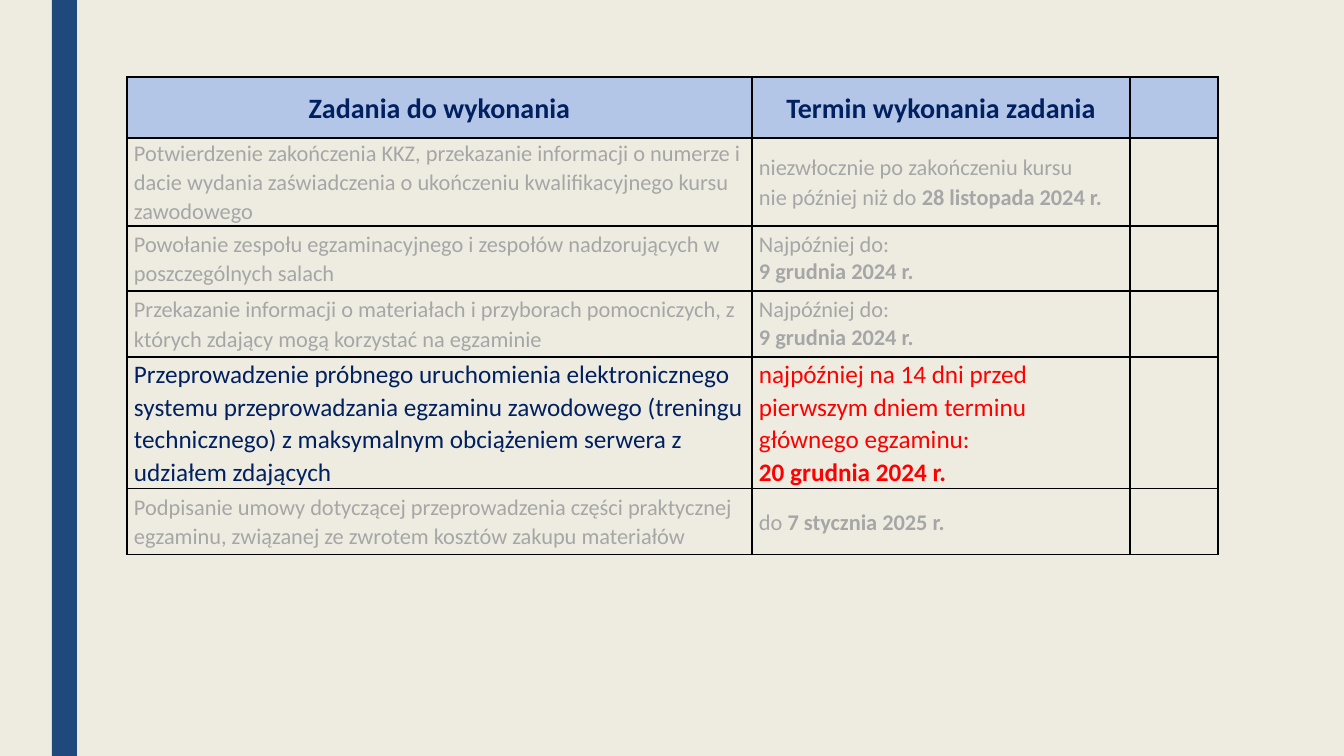
from dataclasses import dataclass

from lxml import etree
from pptx import Presentation
from pptx import util as u
from pptx.dml.color import RGBColor
from pptx.enum import shapes, text
from pptx.oxml import ns

EMU_PER_PX = 914400 / 100.8


@dataclass(frozen=True)
class TextStyle:
    size: int
    color: str
    bold: bool = False
    align: text.PP_ALIGN = text.PP_ALIGN.LEFT


@dataclass(frozen=True)
class Theme:
    font: str = "Calibri"
    background: str = "EEECE1"
    stripe: str = "1F497D"
    header_fill: str = "B4C6E7"
    border: str = "000000"
    border_width: int = 1
    line_spacing: float = 1.07
    header: TextStyle = TextStyle(20, "002060", True, text.PP_ALIGN.CENTER)
    muted: TextStyle = TextStyle(16, "A6A6A6")
    current_task: TextStyle = TextStyle(18, "002060")
    current_deadline: TextStyle = TextStyle(18, "FF0000")


THEME = Theme()


@dataclass(frozen=True)
class Run:
    words: str
    bold: bool = False


@dataclass(frozen=True)
class TaskRow:
    height: int
    task: str
    deadline: list[list[Run]]
    task_style: TextStyle = THEME.muted
    deadline_style: TextStyle = THEME.muted
    deadline_spacing: float = THEME.line_spacing


BY_9_DECEMBER = [[Run("Najpóźniej do:")], [Run("9 grudnia 2024 r.", True)]]
HEADINGS = ["Zadania do wykonania", "Termin wykonania zadania"]
HEADER_HEIGHT = 61
COLUMN_WIDTHS = [625, 378, 88]
TASKS = [
    TaskRow(
        88,
        "Potwierdzenie zakończenia KKZ, przekazanie informacji o numerze i dacie "
        "wydania zaświadczenia o ukończeniu kwalifikacyjnego kursu zawodowego",
        [
            [Run("niezwłocznie po zakończeniu kursu")],
            [Run("nie później niż do "), Run("28 listopada 2024 r.", True)],
        ],
    ),
    TaskRow(
        65,
        "Powołanie zespołu egzaminacyjnego i zespołów nadzorujących w "
        "poszczególnych salach",
        BY_9_DECEMBER,
        deadline_spacing=1.0,
    ),
    TaskRow(
        66,
        "Przekazanie informacji o materiałach i przyborach pomocniczych, z których "
        "zdający mogą korzystać na egzaminie",
        BY_9_DECEMBER,
        deadline_spacing=1.0,
    ),
    TaskRow(
        131,
        "Przeprowadzenie próbnego uruchomienia elektronicznego systemu "
        "przeprowadzania egzaminu zawodowego (treningu technicznego) z maksymalnym "
        "obciążeniem serwera z udziałem zdających",
        [
            [Run("najpóźniej na 14 dni przed pierwszym dniem terminu głównego egzaminu:")],
            [Run("20 grudnia 2024 r.", True)],
        ],
        THEME.current_task,
        THEME.current_deadline,
    ),
    TaskRow(
        66,
        "Podpisanie umowy dotyczącej przeprowadzenia części praktycznej egzaminu, "
        "związanej ze zwrotem kosztów zakupu materiałów",
        [[Run("do "), Run("7 stycznia 2025 r.", True)]],
    ),
]


def px(length: int) -> u.Emu:
    return u.Emu(round(length * EMU_PER_PX))


def set_attributes(target, values: dict) -> None:
    for name, value in values.items():
        setattr(target, name, value)


def fill_solid(fill, color: str) -> None:
    fill.solid()
    fill.fore_color.rgb = RGBColor.from_string(color)


def add_borders(cell) -> None:
    properties = cell._tc.get_or_add_tcPr()
    for side in ("lnL", "lnR", "lnT", "lnB"):
        line = etree.SubElement(
            properties, ns.qn(f"a:{side}"), w=str(u.Pt(THEME.border_width))
        )
        solid = etree.SubElement(line, ns.qn("a:solidFill"))
        etree.SubElement(solid, ns.qn("a:srgbClr"), val=THEME.border)


def write_cell(
    cell, paragraphs: list[list[Run]], style: TextStyle, spacing: float
) -> None:
    for index, runs in enumerate(paragraphs):
        frame = cell.text_frame
        paragraph = frame.add_paragraph() if index else frame.paragraphs[0]
        set_attributes(paragraph, {"alignment": style.align, "line_spacing": spacing})
        for item in runs:
            run = paragraph.add_run()
            run.text = item.words
            set_attributes(
                run.font,
                {
                    "name": THEME.font,
                    "size": u.Pt(style.size),
                    "bold": style.bold or item.bold,
                },
            )
            run.font.color.rgb = RGBColor.from_string(style.color)


def add_stripe(slide) -> None:
    stripe = slide.shapes.add_shape(
        shapes.MSO_SHAPE.RECTANGLE, px(52), px(0), px(25), px(756)
    )
    stripe.shadow.inherit = False
    fill_solid(stripe.fill, THEME.stripe)
    stripe.line.fill.background()


def add_schedule(slide) -> None:
    heights = [HEADER_HEIGHT, *(row.height for row in TASKS)]
    table = slide.shapes.add_table(
        len(heights), len(COLUMN_WIDTHS),
        px(127), px(77), px(sum(COLUMN_WIDTHS)), px(sum(heights)),
    ).table
    set_attributes(table, {"first_row": False, "horz_banding": False})
    for column, width in zip(table.columns, COLUMN_WIDTHS):
        column.width = px(width)
    for index, height in enumerate(heights):
        table.rows[index].height = px(height)
        for cell in table.rows[index].cells:
            set_attributes(
                cell,
                {
                    "margin_left": px(7),
                    "margin_right": px(7),
                    "margin_top": 0,
                    "margin_bottom": 0,
                    "vertical_anchor": text.MSO_ANCHOR.MIDDLE,
                },
            )
            add_borders(cell)
            if index:
                cell.fill.background()
            else:
                fill_solid(cell.fill, THEME.header_fill)
    for column, heading in enumerate(HEADINGS):
        write_cell(
            table.cell(0, column), [[Run(heading)]], THEME.header, THEME.line_spacing
        )
    for index, row in enumerate(TASKS, start=1):
        write_cell(
            table.cell(index, 0), [[Run(row.task)]], row.task_style, THEME.line_spacing
        )
        write_cell(
            table.cell(index, 1), row.deadline, row.deadline_style, row.deadline_spacing
        )


def main() -> None:
    presentation = Presentation()
    set_attributes(presentation, {"slide_width": px(1344), "slide_height": px(756)})
    slide = presentation.slides.add_slide(presentation.slide_layouts[6])
    fill_solid(slide.background.fill, THEME.background)
    add_stripe(slide)
    add_schedule(slide)
    presentation.save("out.pptx")


if __name__ == "__main__":
    main()
